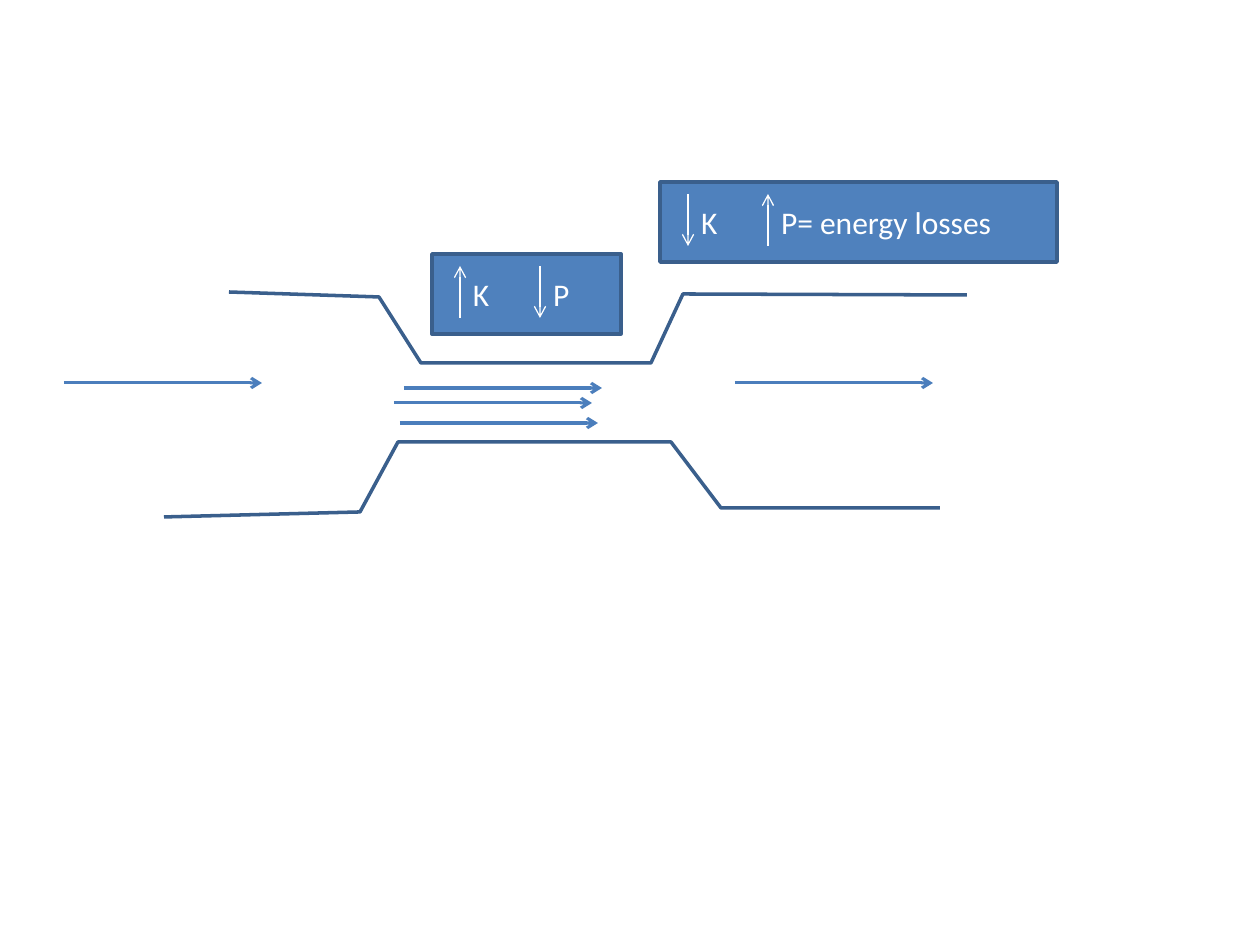
from pptx import Presentation, util as u
from pptx.dml.color import RGBColor
from pptx.enum import shapes as s, text as t
from pptx.oxml.ns import qn
from lxml import etree

PX = 914400 / 126  # EMU per px

THEME = {
    "font": "Calibri", "size": 18,
    "fill": "4F81BD", "edge": "3A5F8C", "flow": "4B7EBC", "text": "FFFFFF",
    "edge_pt": 2, "flow_pt": 1.75, "mark_pt": 0.75,
}

# Content: pipe walls as points
WALLS = [
    [(229, 292), (379, 297), (421, 363), (651, 363), (683, 294), (967, 295)],
    [(164, 517), (360, 512), (398, 442), (671, 442), (721, 508), (940, 508)],
]

# Flow arrows: left, y, all of one length
FLOWS = [(64, 383), (735, 383), (404, 388), (400, 423), (394, 403)]
FLOW_LEN = 198

# Boxes: left, top, width, label, direction of the K and P marks
BOXES = [
    (432, 254, 189, "K\tP", ("up", "down")),
    (660, 182, 397, "K\tP= energy losses", ("down", "up")),
]
BOX_H = 80
INSET, TAB = 41, 80    # start of K, then distance to P
MARKS = (28, 108)      # x of the marks inside a box
MARK_TOP, MARK_END = 12, 64


def emu(px):
    return u.Emu(round(px * PX))


def ink(name):
    return RGBColor.from_string(THEME[name])


def stroke(line, hue, width):
    line.color.rgb = ink(hue)
    line.width = u.Pt(THEME[width])


def wall(slide, pts):
    form = slide.shapes.build_freeform(*pts[0], scale=PX)
    form.add_line_segments(pts[1:], close=False)
    shape = form.convert_to_shape()
    shape.shadow.inherit = False
    shape.fill.background()
    stroke(shape.line, "edge", "edge_pt")


def arrow(slide, x1, y1, x2, y2, hue, width):
    line = slide.shapes.add_connector(
        s.MSO_CONNECTOR.STRAIGHT, *map(emu, (x1, y1, x2, y2)))
    stroke(line.line, hue, width)
    props = line.element.spPr
    etree.SubElement(props.find(qn("a:ln")), qn("a:tailEnd"), type="arrow")
    etree.SubElement(props, qn("a:effectLst"))


def box(slide, x, y, w, label, marks):
    shape = slide.shapes.add_shape(
        s.MSO_SHAPE.RECTANGLE, *map(emu, (x, y, w, BOX_H)))
    shape.shadow.inherit = False
    shape.fill.solid()
    shape.fill.fore_color.rgb = ink("fill")
    stroke(shape.line, "edge", "edge_pt")

    # Label with one tab stop between K and P
    frame = shape.text_frame
    frame.margin_left = emu(INSET)
    frame.vertical_anchor = t.MSO_ANCHOR.MIDDLE
    frame.text = label
    para = frame.paragraphs[0]
    para.alignment = t.PP_ALIGN.LEFT
    tabs = etree.Element(qn("a:tabLst"))
    etree.SubElement(tabs, qn("a:tab"), pos=str(emu(TAB)), algn="l")
    para.font.name = THEME["font"]
    para.font.size = u.Pt(THEME["size"])
    para.font.color.rgb = ink("text")
    para._p.pPr.insert(0, tabs)

    # Rise and fall marks
    for dx, way in zip(MARKS, marks):
        ends = (y + MARK_TOP, y + MARK_END)
        start, end = ends if way == "down" else ends[::-1]
        arrow(slide, x + dx, start, x + dx, end, "text", "mark_pt")


def main():
    deck = Presentation()
    deck.slide_width, deck.slide_height = emu(1260), emu(945)
    slide = deck.slides.add_slide(deck.slide_layouts[6])
    for pts in WALLS:
        wall(slide, pts)
    for x, y in FLOWS:
        arrow(slide, x, y, x + FLOW_LEN, y, "flow", "flow_pt")
    for item in BOXES:
        box(slide, *item)
    deck.save("out.pptx")


if __name__ == "__main__":
    main()
